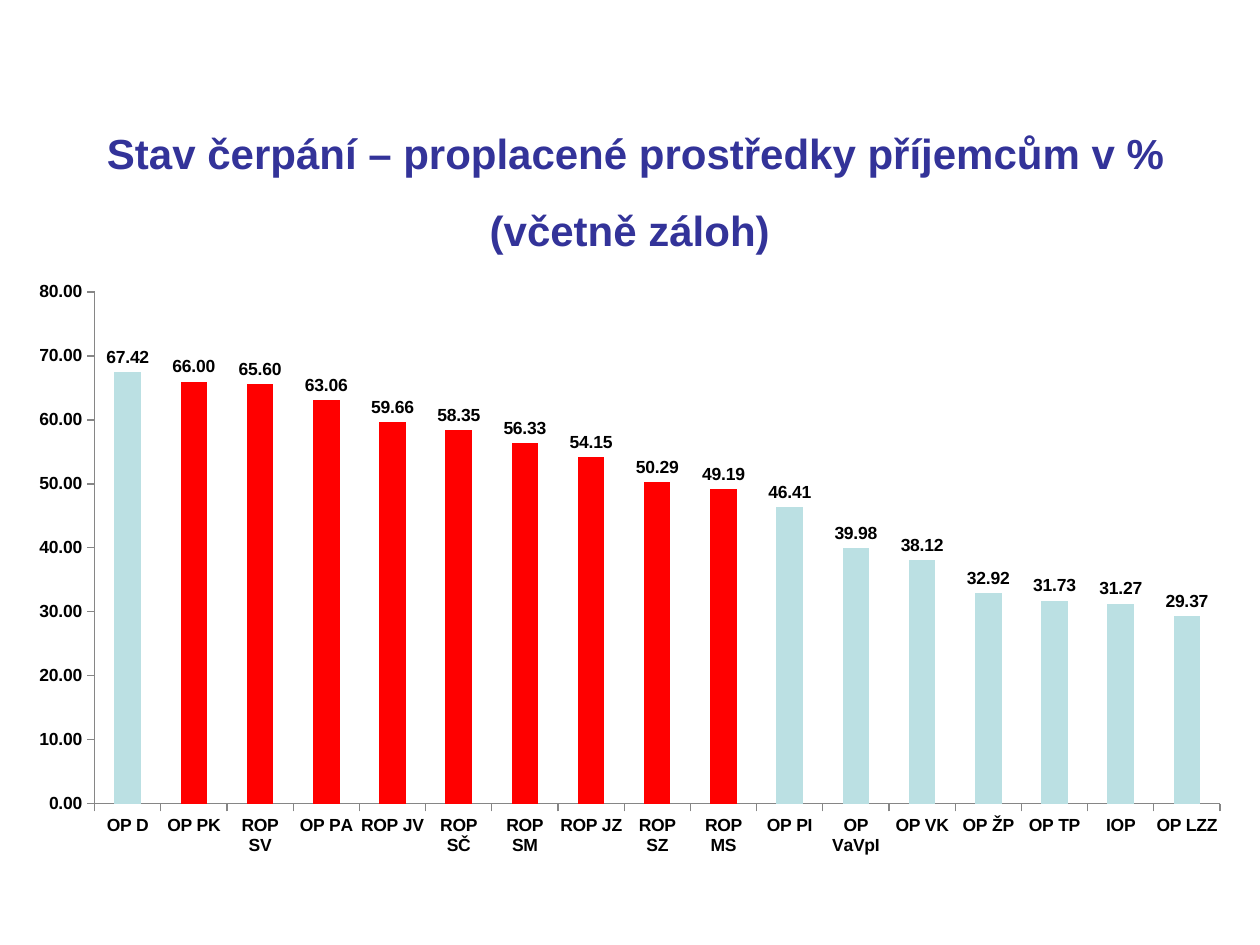
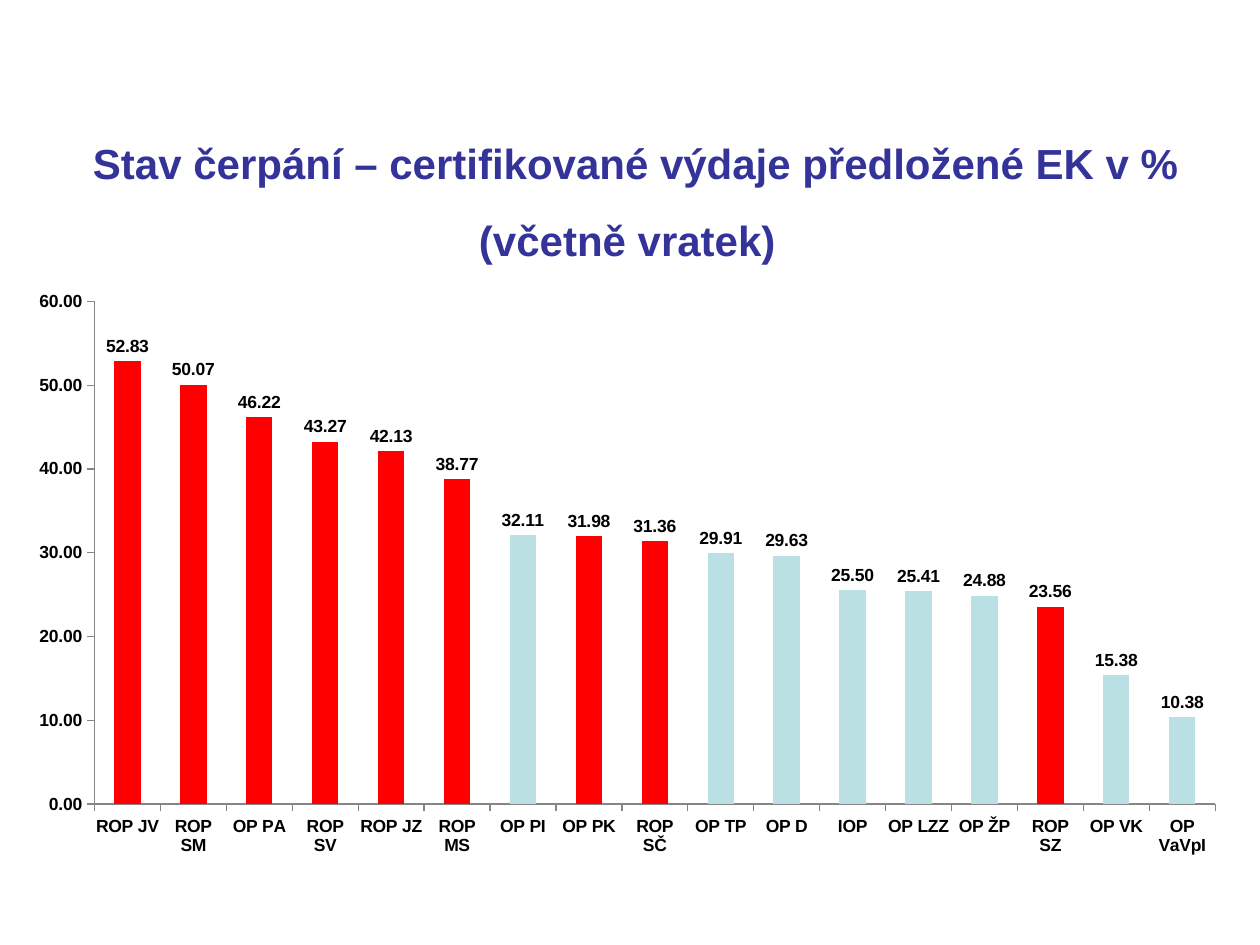
from dataclasses import dataclass

import pptx
import pptx.chart.axis
import pptx.chart.chart
import pptx.chart.data
import pptx.dml.color
import pptx.enum.chart
import pptx.enum.text
import pptx.slide
import pptx.text.text
import pptx.util
from pptx.util import Cm

FONT = "Arial"
HEADING_COLOR = "333399"
TEXT_COLOR = "000000"
REGIONAL_COLOR = "FF0000"
OTHER_COLOR = "BBE0E3"
GRID_COLOR = "FFFFFF"
AXIS_COLOR = "868686"
NUMBER_FORMAT = "#,##0.00"
HEADING_HEIGHT = Cm(1.6)
CHART_BOTTOM = Cm(17.53)


@dataclass(frozen=True)
class Overview:
    heading: str
    subheading: str
    chart_top: float
    chart_width: float
    axis_maximum: int
    shares: dict[str, float]


OVERVIEWS = [
    Overview(
        "Stav čerpání – proplacené prostředky příjemcům v %",
        "(včetně záloh)",
        3.53, 24.79, 80,
        {
            "OP D": 67.42, "OP PK": 66, "ROP SV": 65.6, "OP PA": 63.06,
            "ROP JV": 59.66, "ROP SČ": 58.35, "ROP SM": 56.33,
            "ROP JZ": 54.15, "ROP SZ": 50.29, "ROP MS": 49.19,
            "OP PI": 46.41, "OP VaVpI": 39.98, "OP VK": 38.12,
            "OP ŽP": 32.92, "OP TP": 31.73, "IOP": 31.27, "OP LZZ": 29.37,
        },
    ),
    Overview(
        "Stav čerpání – certifikované výdaje předložené EK v %",
        "(včetně vratek)",
        3.73, 24.69, 60,
        {
            "ROP JV": 52.83, "ROP SM": 50.07, "OP PA": 46.22,
            "ROP SV": 43.27, "ROP JZ": 42.13, "ROP MS": 38.77,
            "OP PI": 32.11, "OP PK": 31.98, "ROP SČ": 31.36,
            "OP TP": 29.91, "OP D": 29.63, "IOP": 25.5, "OP LZZ": 25.41,
            "OP ŽP": 24.88, "ROP SZ": 23.56, "OP VK": 15.38,
            "OP VaVpI": 10.38,
        },
    ),
]


def rgb(value: str) -> pptx.dml.color.RGBColor:
    return pptx.dml.color.RGBColor.from_string(value)


def style_font(font: pptx.text.text.Font, size: float, color: str) -> None:
    font.name = FONT
    font.size = pptx.util.Pt(size)
    font.bold = True
    font.color.rgb = rgb(color)


def add_heading_run(paragraph, text: str) -> None:
    run = paragraph.add_run()
    run.text = text
    style_font(run.font, 24, HEADING_COLOR)


def add_heading(slide: pptx.slide.Slide, overview: Overview) -> None:
    top = Cm(overview.chart_top) - HEADING_HEIGHT
    heading = slide.shapes.add_textbox(Cm(0.51), top, Cm(24.61), HEADING_HEIGHT)
    frame = heading.text_frame
    frame.word_wrap = True
    frame.auto_size = pptx.enum.text.MSO_AUTO_SIZE.SHAPE_TO_FIT_TEXT
    paragraph = frame.paragraphs[0]
    paragraph.alignment = pptx.enum.text.PP_ALIGN.CENTER
    paragraph.line_spacing = 1.5
    add_heading_run(paragraph, overview.heading)


def is_regional(programme: str) -> bool:
    return programme.startswith("ROP") or programme in ("OP PK", "OP PA")


def style_axes(chart: pptx.chart.chart.Chart, maximum: int) -> None:
    for axis in (chart.category_axis, chart.value_axis):
        axis.major_tick_mark = pptx.enum.chart.XL_TICK_MARK.OUTSIDE
        axis.minor_tick_mark = pptx.enum.chart.XL_TICK_MARK.NONE
        axis.format.line.color.rgb = rgb(AXIS_COLOR)
        axis.format.line.width = pptx.util.Pt(0.75)
        style_font(axis.tick_labels.font, 10, TEXT_COLOR)
    values = chart.value_axis
    values.minimum_scale = 0
    values.maximum_scale = maximum
    values.major_unit = 10
    values.tick_labels.number_format = NUMBER_FORMAT
    values.tick_labels.number_format_is_linked = False
    values.major_gridlines.format.line.color.rgb = rgb(GRID_COLOR)
    values.major_gridlines.format.line.width = pptx.util.Pt(0.75)


def add_share_chart(slide: pptx.slide.Slide, overview: Overview) -> None:
    data = pptx.chart.data.CategoryChartData(number_format=NUMBER_FORMAT)
    data.categories = list(overview.shares)
    data.add_series("Series 1", list(overview.shares.values()))
    top = Cm(overview.chart_top)
    chart = slide.shapes.add_chart(
        pptx.enum.chart.XL_CHART_TYPE.COLUMN_CLUSTERED,
        Cm(0.3), top, Cm(overview.chart_width), CHART_BOTTOM - top, data,
    ).chart
    style_font(chart.font, 10, TEXT_COLOR)
    chart.has_legend = False
    chart.has_title = True
    chart.chart_title.include_in_layout = False
    add_heading_run(chart.chart_title.text_frame.paragraphs[0], overview.subheading)
    style_axes(chart, overview.axis_maximum)

    plot = chart.plots[0]
    plot.vary_by_categories = False
    plot.gap_width = 150
    shares = plot.series[0]
    shares.invert_if_negative = False
    shares.format.fill.solid()
    shares.format.fill.fore_color.rgb = rgb(OTHER_COLOR)
    for index, programme in enumerate(overview.shares):
        if is_regional(programme):
            fill = shares.points[index].format.fill
            fill.solid()
            fill.fore_color.rgb = rgb(REGIONAL_COLOR)

    labels = shares.data_labels
    labels.show_value = True
    labels.position = pptx.enum.chart.XL_LABEL_POSITION.OUTSIDE_END
    labels.number_format = NUMBER_FORMAT
    labels.number_format_is_linked = False
    style_font(labels.font, 10, TEXT_COLOR)


def main() -> None:
    presentation = pptx.Presentation()
    presentation.slide_width = Cm(25.4)
    presentation.slide_height = Cm(19.05)
    for overview in OVERVIEWS:
        slide = presentation.slides.add_slide(presentation.slide_layouts[6])
        add_heading(slide, overview)
        add_share_chart(slide, overview)
    presentation.save("out.pptx")


if __name__ == "__main__":
    main()
